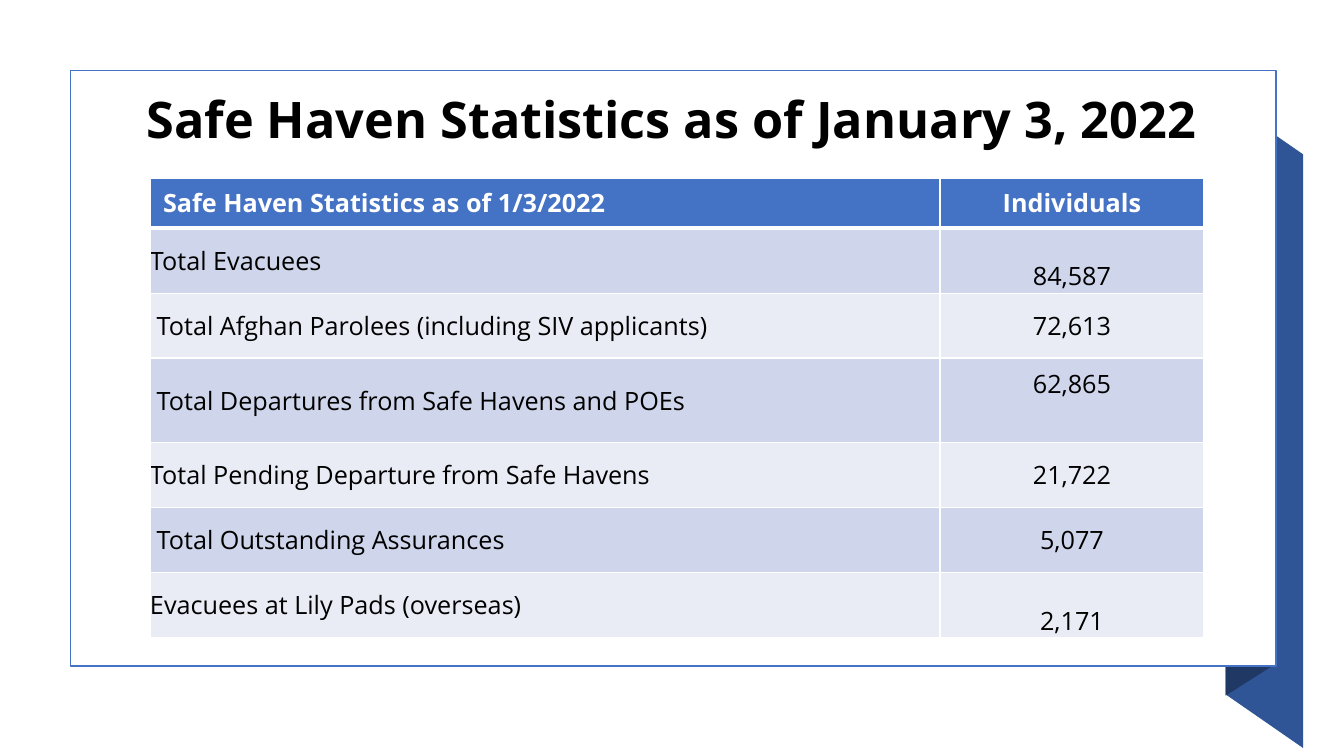
from dataclasses import dataclass

from lxml import etree
from pptx import Presentation
from pptx import util as u
from pptx.dml.color import RGBColor
from pptx.enum import shapes, text
from pptx.oxml import ns

COLORS = {
    "black": "000000",
    "white": "FFFFFF",
    "blue": "4472C4",
    "ribbon": "2F5597",
    "fold": "203864",
    "band_dark": "CFD5EA",
    "band_light": "E9EBF5",
}
FONT = "Open Sans"


@dataclass
class Ribbon:
    color: str
    points: list[tuple[float, float]]


@dataclass
class StatRow:
    label: str
    value: str
    height: float
    indent: float = 0
    value_top: float = 0
    value_bottom: float = 0


RIBBONS = [
    Ribbon("ribbon", [(32.84, 18.85), (30.89, 17.5), (30.89, 2.54), (32.84, 3.89)]),
    Ribbon("fold", [(32.05, 16.79), (30.89, 17.53), (30.89, 2.54), (32.05, 1.78)]),
]
STATS = [
    StatRow("Safe Haven Statistics as of 1/3/2022", "Individuals", 1.24, indent=0.33),
    StatRow("Total Evacuees", "84,587", 1.65, value_top=0.77),
    StatRow("Total Afghan Parolees (including SIV applicants)", "72,613", 1.63, indent=0.17),
    StatRow("Total Departures from Safe Havens and POEs", "62,865", 2.14, indent=0.17, value_bottom=0.86),
    StatRow("Total Pending Departure from Safe Havens", "21,722", 1.63),
    StatRow("Total Outstanding Assurances", "5,077", 1.63, indent=0.17),
    StatRow("Evacuees at Lily Pads (overseas)", "2,171", 1.65, value_top=0.77),
]
COLUMN_WIDTHS = [19.91, 6.65]


def rgb(name: str) -> RGBColor:
    return RGBColor.from_string(COLORS[name])


def add_run(p, content: str, size: float, color: str, bold: bool) -> None:
    r = p.add_run()
    r.text = content
    r.font.name = FONT
    r.font.size = u.Pt(size)
    r.font.bold = bold
    r.font.color.rgb = rgb(color)


def add_ribbon(slide, ribbon: Ribbon) -> None:
    points = [(u.Cm(x), u.Cm(y)) for x, y in ribbon.points]
    builder = slide.shapes.build_freeform(*points[0], scale=1.0)
    builder.add_line_segments(points[1:], close=True)
    sp = builder.convert_to_shape()
    sp.shadow.inherit = False
    sp.fill.solid()
    sp.fill.fore_color.rgb = rgb(ribbon.color)
    sp.line.fill.background()


def add_panel(slide) -> None:
    sp = slide.shapes.add_shape(
        shapes.MSO_SHAPE.RECTANGLE, u.Cm(1.78), u.Cm(1.78), u.Cm(30.38), u.Cm(15)
    )
    sp.shadow.inherit = False
    sp.fill.solid()
    sp.fill.fore_color.rgb = rgb("white")
    sp.line.color.rgb = rgb("blue")
    sp.line.width = u.Pt(1)


def set_title(slide) -> None:
    title = slide.shapes.title
    title.left, title.top = u.Cm(2.84), u.Cm(2.18)
    title.width, title.height = u.Cm(28.17), u.Cm(1.8)
    tf = title.text_frame
    tf.word_wrap = True
    tf.auto_size = text.MSO_AUTO_SIZE.NONE
    tf.vertical_anchor = text.MSO_ANCHOR.MIDDLE
    p = tf.paragraphs[0]
    p.alignment = text.PP_ALIGN.CENTER
    p.line_spacing = 0.9
    add_run(p, "Safe Haven Statistics as of January 3, 2022", 36, "black", True)


def set_borders(cell, top: float, bottom: float) -> None:
    properties = cell._tc.get_or_add_tcPr()
    for side, width in {"L": 1, "R": 1, "T": top, "B": bottom}.items():
        line = etree.SubElement(properties, ns.qn(f"a:ln{side}"), w=str(u.Pt(width)))
        fill = etree.SubElement(line, ns.qn("a:solidFill"))
        etree.SubElement(fill, ns.qn("a:srgbClr"), val=COLORS["white"])


def fill_cell(cell, content: str, row: int, column: int, stat: StatRow) -> None:
    header = row == 0
    set_borders(cell, 3 if row == 1 else 1, 3 if header else 1)
    cell.fill.solid()
    band = "band_dark" if row % 2 else "band_light"
    cell.fill.fore_color.rgb = rgb("blue" if header else band)
    cell.vertical_anchor = text.MSO_ANCHOR.MIDDLE
    is_value = column == 1
    cell.margin_left = u.Cm(0 if is_value else stat.indent)
    cell.margin_right = u.Cm(0)
    cell.margin_top = u.Cm(stat.value_top if is_value else 0)
    cell.margin_bottom = u.Cm(stat.value_bottom if is_value else 0)
    p = cell.text_frame.paragraphs[0]
    p.alignment = text.PP_ALIGN.CENTER if is_value else text.PP_ALIGN.LEFT
    add_run(p, content, 18, "white" if header else "black", header)


def add_stats_table(slide) -> None:
    height = sum(stat.height for stat in STATS)
    table = slide.shapes.add_table(
        len(STATS), len(COLUMN_WIDTHS),
        u.Cm(3.78), u.Cm(4.5), u.Cm(sum(COLUMN_WIDTHS)), u.Cm(height),
    ).table
    for column, width in zip(table.columns, COLUMN_WIDTHS):
        column.width = u.Cm(width)
    for i, stat in enumerate(STATS):
        table.rows[i].height = u.Cm(stat.height)
        for j, content in enumerate((stat.label, stat.value)):
            fill_cell(table.cell(i, j), content, i, j, stat)


def main() -> None:
    prs = Presentation()
    prs.slide_width, prs.slide_height = u.Cm(33.87), u.Cm(19.05)
    slide = prs.slides.add_slide(prs.slide_layouts.get_by_name("Title Only"))
    for ribbon in RIBBONS:
        add_ribbon(slide, ribbon)
    add_panel(slide)
    set_title(slide)
    tree = slide.shapes.title.element.getparent()
    tree.append(slide.shapes.title.element)
    add_stats_table(slide)
    prs.save("out.pptx")


if __name__ == "__main__":
    main()
